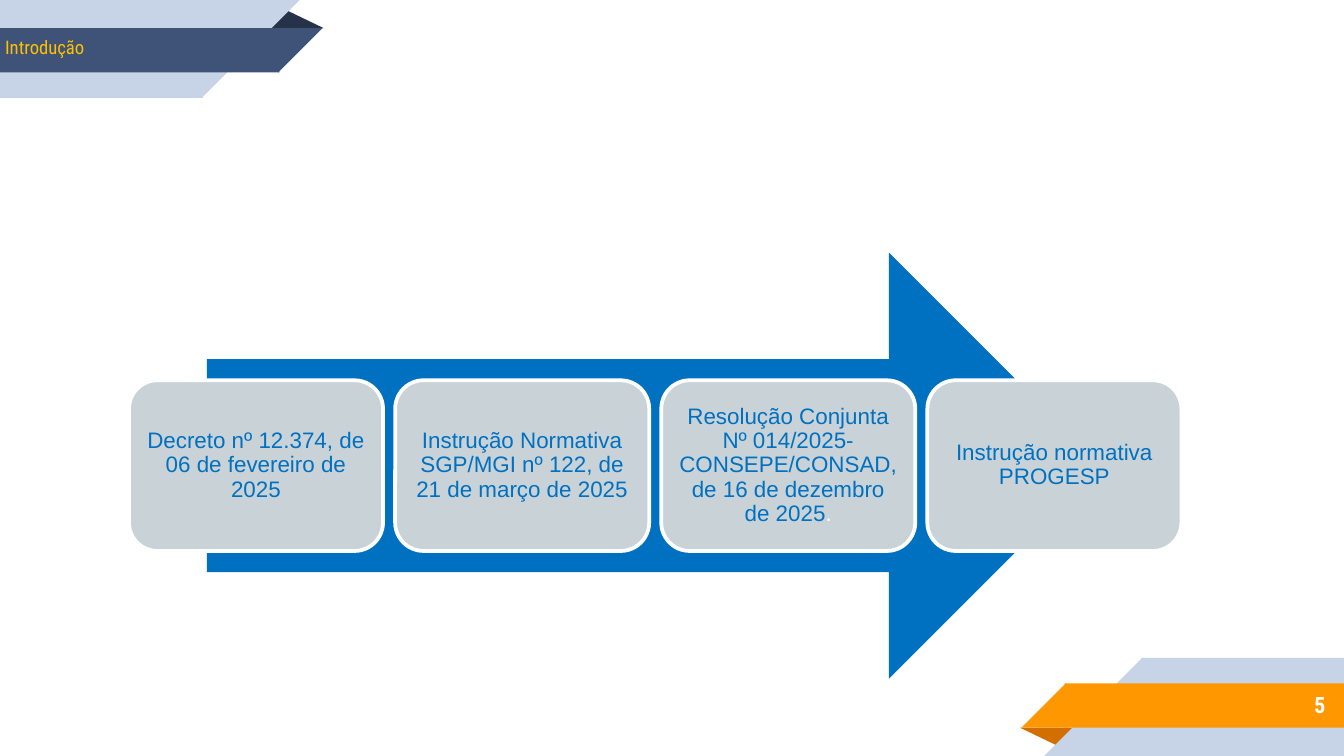
from dataclasses import dataclass

from pptx import Presentation
from pptx.dml.color import RGBColor as RGB
from pptx.enum.shapes import MSO_SHAPE as Shape
from pptx.enum.text import MSO_ANCHOR as Anchor, MSO_AUTO_SIZE as AutoSize, PP_ALIGN as Align
from pptx.util import Inches, Pt

WIDTH = 10
HEIGHT = WIDTH * 9 / 16
OVERLAP = 0.01


@dataclass(frozen=True)
class Theme:
    pale: RGB = RGB.from_string("C7D3E6")
    navy: RGB = RGB.from_string("3F5378")
    navy_fold: RGB = RGB.from_string("263248")
    orange: RGB = RGB.from_string("FF9800")
    orange_fold: RGB = RGB.from_string("D26F00")
    gold: RGB = RGB.from_string("FFC000")
    blue: RGB = RGB.from_string("0070C0")
    card: RGB = RGB.from_string("C9D3D7")
    white: RGB = RGB.from_string("FFFFFF")
    heading_font: str = "Roboto Condensed"
    body_font: str = "Arial"
    title_size: Pt = Pt(10)
    body_size: Pt = Pt(12)


class SlideBuilder:
    def __init__(self, slide, theme):
        self.slide = slide
        self.theme = theme

    def shape(self, kind, left, top, width, height, fill):
        shape = self.slide.shapes.add_shape(
            kind, Inches(left), Inches(top), Inches(width), Inches(height))
        shape.shadow.inherit = False
        shape.fill.solid()
        shape.fill.fore_color.rgb = fill
        shape.line.fill.background()
        return shape

    def corner(self, band, fold, turned=False):
        def place(kind, left, top, width, height, fill):
            if turned:
                left, top = WIDTH - left - width, HEIGHT - top - height
            part = self.shape(kind, left, top, width, height, fill)
            part.rotation = 180 if turned else 0
            return part

        def ribbon(top, length, height, fill):
            place(Shape.RECTANGLE, 0, top, length + OVERLAP, height, fill)
            tip = place(Shape.RIGHT_TRIANGLE, length, top, height, height, fill)
            tip._element.spPr.get_or_add_xfrm().set("flipV", "1")

        corner_fold = place(Shape.ISOSCELES_TRIANGLE, 1.98, 0.07, 0.43, 0.14, fold)
        corner_fold.adjustments[0] = 0.324
        ribbon(0, 1.5, 0.73, self.theme.pale)
        ribbon(0.21, 2.07, 0.33, band)

    def label(self, text, left, top, width, height, size, color, align=Align.LEFT, bold=False):
        box = self.slide.shapes.add_textbox(
            Inches(left), Inches(top), Inches(width), Inches(height))
        frame = box.text_frame
        frame.word_wrap = True
        para = frame.paragraphs[0]
        para.text = text
        para.alignment = align
        para.font.name = self.theme.heading_font
        para.font.size = size
        para.font.bold = bold
        para.font.color.rgb = color
        return frame

    def title(self, text):
        frame = self.label(text, -0.06, 0.22, 2.7, 0.27, self.theme.title_size, self.theme.gold)
        frame.auto_size = AutoSize.SHAPE_TO_FIT_TEXT

    def page_number(self, text):
        frame = self.label(text, 8.33, 5.07, 1.63, 0.35, self.theme.body_size,
                           self.theme.white, Align.RIGHT, True)
        frame.vertical_anchor = Anchor.MIDDLE
        frame.margin_top = frame.margin_bottom = Inches(0.1)

    def card(self, left, text, white_ending=""):
        theme = self.theme
        card = self.shape(Shape.ROUNDED_RECTANGLE, left, 2.83, 1.89, 1.27, theme.card)
        card.line.color.rgb = theme.white
        card.line.width = Pt(2)
        frame = card.text_frame
        frame.word_wrap = True
        frame.vertical_anchor = Anchor.MIDDLE
        frame.margin_left = frame.margin_right = Inches(0.05)
        frame.margin_top = frame.margin_bottom = Inches(0.05)
        para = frame.paragraphs[0]
        para.alignment = Align.CENTER
        para.line_spacing = 0.9
        para.font.name = theme.body_font
        para.font.size = theme.body_size
        for words, color in ((text, theme.blue), (white_ending, theme.white)):
            if words:
                span = para.add_run()
                span.text = words
                span.font.color.rgb = color


def main():
    deck = Presentation()
    deck.slide_width, deck.slide_height = Inches(WIDTH), Inches(HEIGHT)
    theme = Theme()
    page = SlideBuilder(deck.slides.add_slide(deck.slide_layouts[6]), theme)

    page.corner(theme.orange, theme.orange_fold, turned=True)
    page.corner(theme.navy, theme.navy_fold)
    page.page_number("5")
    page.title("Introdução")

    page.shape(Shape.RIGHT_ARROW, 1.54, 1.88, 6.66, 3.17, theme.blue)
    steps = (
        ("Decreto nº 12.374, de 06 de fevereiro de 2025",),
        ("Instrução Normativa SGP/MGI nº 122, de 21 de março de 2025",),
        ("Resolução Conjunta Nº 014/2025-CONSEPE/CONSAD, de 16 de dezembro de 2025", "."),
        ("Instrução normativa PROGESP",),
    )
    for index, step in enumerate(steps):
        page.card(0.96 + 1.98 * index, *step)

    deck.save("out.pptx")


if __name__ == "__main__":
    main()
